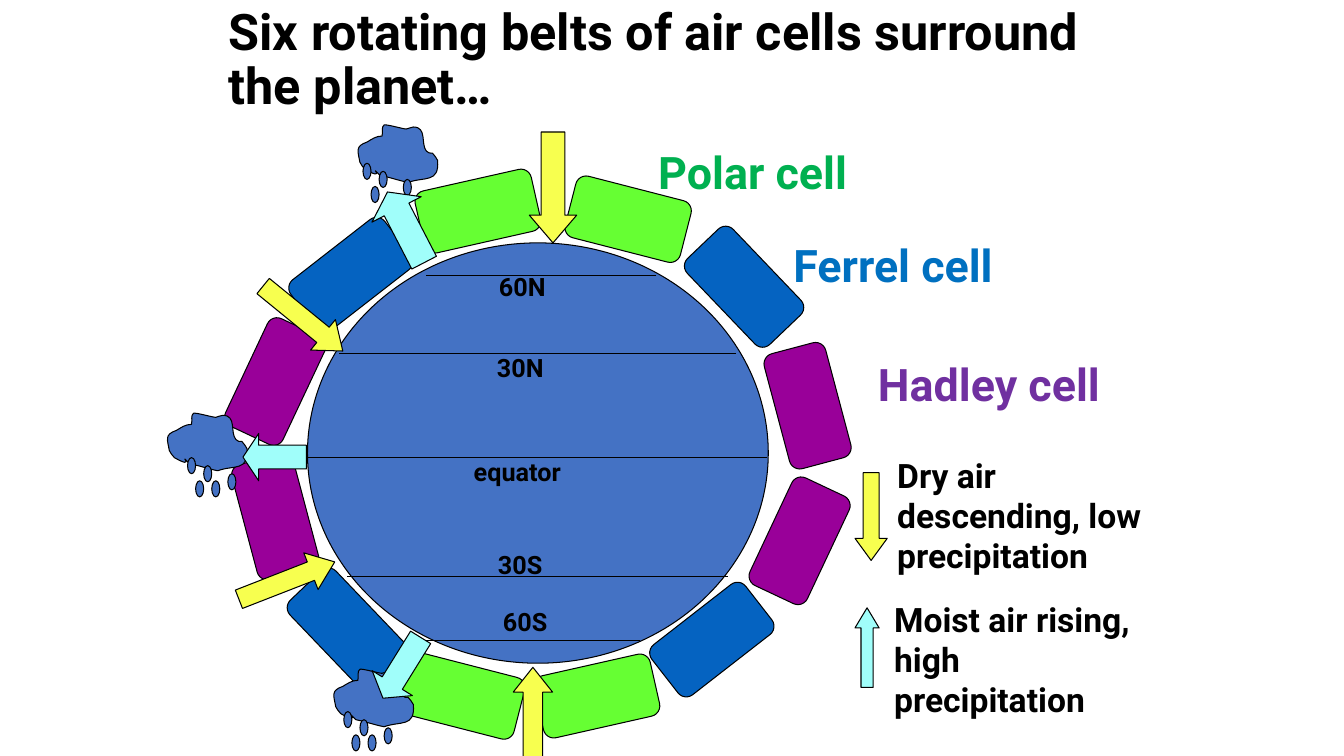
from dataclasses import dataclass
from lxml.etree import SubElement
from pptx import Presentation
from pptx.dml.color import RGBColor
from pptx.enum.shapes import MSO_CONNECTOR, MSO_SHAPE
from pptx.enum.text import MSO_ANCHOR, MSO_AUTO_SIZE
from pptx.oxml.ns import qn
from pptx.util import Inches, Pt

COLORS = {
    "black": "000000", "earth": "4472C4",
    "polar": "66FF33", "ferrel": "0563C1", "hadley": "990099",
    "polar text": "00B050", "ferrel text": "0070C0", "hadley text": "7030A0",
    "dry": "F7FF4F", "moist": "A0FEFA",
}
FONT = "Roboto"
LINE_WIDTH = Pt(0.75)
CELL_SIZE = (1.18, 0.63)
DROP_SIZE = (0.08, 0.16)
CLOUD_START = (0.27, 0.12)
CLOUD_CURVES = [
    ((0.28, 0.08), (0.26, 0.03), (0.29, 0.01)),
    ((0.31, 0), (0.48, 0.05), (0.51, 0.05)),
    ((0.53, 0.05), (0.55, 0.03), (0.58, 0.03)),
    ((0.72, 0.03), (0.65, 0.2), (0.71, 0.27)),
    ((0.72, 0.29), (0.75, 0.29), (0.77, 0.29)),
    ((0.79, 0.32), (0.81, 0.33), (0.82, 0.36)),
    ((0.84, 0.59), (0.69, 0.52), (0.53, 0.58)),
    ((0.43, 0.56), (0.35, 0.53), (0.25, 0.51)),
    ((0.12, 0.38), (0.33, 0.58), (0.1, 0.45)),
    ((0.07, 0.43), (0.07, 0.4), (0.05, 0.38)),
    ((0.03, 0.27), (0, 0.22), (0.12, 0.18)),
    ((0.17, 0.15), (0.21, 0.12), (0.27, 0.12)),
]


@dataclass
class Cell:
    belt: str
    left: float
    top: float
    tilt: float


@dataclass
class Cloud:
    left: float
    top: float
    rain_left: float
    rain_top: float
    lowest_drop: float = 0.23


@dataclass
class Arrow:
    kind: MSO_SHAPE
    air: str
    left: float
    top: float
    width: float
    height: float
    head: float
    tilt: float = 0


@dataclass
class Label:
    lines: list[str]
    left: float
    top: float
    width: float
    height: float
    size: int
    color: str = "black"


@dataclass
class Latitude:
    left: float
    right: float
    top: float


CELLS = [
    Cell("polar", 5.64, 1.86, 14.4), Cell("ferrel", 6.79, 2.53, 46.3),
    Cell("hadley", 7.42, 3.71, 75.1), Cell("hadley", 7.34, 5.05, 115.2),
    Cell("ferrel", 6.47, 6.03, 142.1), Cell("polar", 5.33, 6.59, 347.3),
    Cell("polar", 3.99, 6.59, 14.4), Cell("ferrel", 2.89, 2.41, 142.1),
    Cell("polar", 4.15, 1.78, 347.3), Cell("hadley", 2.14, 3.47, 115.2),
    Cell("hadley", 2.14, 4.81, 75.1), Cell("ferrel", 2.85, 5.92, 46.3),
]
CLOUDS = [
    Cloud(3.52, 1.23, 3.6, 1.62, lowest_drop=0.37),
    Cloud(3.28, 6.63, 3.41, 7.06),
    Cloud(1.63, 4.09, 1.86, 4.54),
]
ARROWS = [
    Arrow(MSO_SHAPE.DOWN_ARROW, "dry", 8.48, 4.69, 0.32, 0.87, 0.685),
    Arrow(MSO_SHAPE.UP_ARROW, "moist", 8.48, 6.03, 0.24, 0.79, 0.833),
    Arrow(MSO_SHAPE.DOWN_ARROW, "dry", 2.81, 2.65, 0.39, 1.02, 0.65, 309.2),
    Arrow(MSO_SHAPE.DOWN_ARROW, "dry", 5.25, 1.31, 0.47, 1.1, 0.584),
    Arrow(MSO_SHAPE.UP_ARROW, "dry", 5.09, 6.62, 0.39, 0.99, 0.63),
    Arrow(MSO_SHAPE.UP_ARROW, "dry", 2.65, 5.25, 0.39, 1.02, 0.65, 68.7),
    Arrow(MSO_SHAPE.UP_ARROW, "moist", 3.75, 1.86, 0.55, 0.79, 0.356, 332.6),
    Arrow(MSO_SHAPE.LEFT_ARROW, "moist", 2.41, 4.3, 0.63, 0.47, 0.333),
    Arrow(MSO_SHAPE.DOWN_ARROW, "moist", 3.75, 6.27, 0.47, 0.71, 0.374, 31.8),
]
LATITUDES = [
    Latitude(4.23, 6.51, 2.73), Latitude(3.36, 7.3, 3.51),
    Latitude(3.04, 7.61, 4.54), Latitude(3.44, 7.22, 5.72),
    Latitude(4.23, 6.35, 6.35),
]
TITLE = Label(["Six rotating belts of air cells surround the planet…"],
              2.17, -0.02, 9, 1.25, 36)
LABELS = [
    Label(["Polar cell"], 6.43, 1.39, 2.26, 0.63, 32, "polar text"),
    Label(["Ferrel cell"], 7.77, 2.31, 2.4, 0.63, 32, "ferrel text"),
    Label(["Hadley cell"], 8.61, 3.49, 2.64, 0.63, 32, "hadley text"),
    Label(["Dry air", "descending, low", "precipitation"], 8.8, 4.46, 3.03, 1.31, 24),
    Label(["Moist air rising,", "high", "precipitation"], 8.77, 5.89, 2.83, 1.31, 24),
    Label(["60N"], 4.85, 2.64, 0.71, 0.4, 18),
    Label(["30N"], 4.83, 3.45, 0.71, 0.4, 18),
    Label(["equator"], 4.6, 4.48, 1.18, 0.4, 18),
    Label(["30S"], 4.84, 5.4, 0.68, 0.4, 18),
    Label(["60S"], 4.89, 5.97, 0.68, 0.4, 18),
]


def color(name: str) -> RGBColor:
    return RGBColor.from_string(COLORS[name])


def paint(shape, fill: str) -> None:
    shape.shadow.inherit = False
    shape.fill.solid()
    shape.fill.fore_color.rgb = color(fill)
    shape.line.color.rgb = color("black")
    shape.line.width = LINE_WIDTH


def draw_shape(page, kind: MSO_SHAPE, left: float, top: float, width: float,
               height: float, fill: str, tilt: float = 0):
    shape = page.shapes.add_shape(
        kind, Inches(left), Inches(top), Inches(width), Inches(height))
    shape.rotation = tilt
    paint(shape, fill)
    return shape


def draw_arrow(page, arrow: Arrow) -> None:
    shape = draw_shape(page, arrow.kind, arrow.left, arrow.top, arrow.width,
                       arrow.height, arrow.air, arrow.tilt)
    shape.adjustments[0] = 0.5
    shape.adjustments[1] = arrow.head


def bend_segments(shape) -> None:
    segments = list(shape._element.iter(qn("a:lnTo")))
    for start in range(0, len(segments), 3):
        first, *others = segments[start:start + 3]
        first.tag = qn("a:cubicBezTo")
        for segment in others:
            first.append(segment[0])
            segment.getparent().remove(segment)


def draw_cloud(page, cloud: Cloud) -> None:
    outline = [CLOUD_START] + [point for curve in CLOUD_CURVES for point in curve]
    points = [(Inches(cloud.left + x), Inches(cloud.top + y)) for x, y in outline]
    builder = page.shapes.build_freeform(*points[0])
    builder.add_line_segments(points[1:], close=True)
    shape = builder.convert_to_shape()
    bend_segments(shape)
    paint(shape, "earth")
    drops = [(0.16, 0.08), (0.4, 0.16), (0, 0), (0.24, cloud.lowest_drop), (0.08, 0.23)]
    for x, y in drops:
        draw_shape(page, MSO_SHAPE.OVAL, cloud.rain_left + x, cloud.rain_top + y,
                   *DROP_SIZE, "earth")


def draw_latitude(page, latitude: Latitude) -> None:
    line = page.shapes.add_connector(
        MSO_CONNECTOR.STRAIGHT, Inches(latitude.right), Inches(latitude.top),
        Inches(latitude.left), Inches(latitude.top))
    line.line.color.rgb = color("black")
    line.line.width = LINE_WIDTH
    SubElement(line._element.spPr, qn("a:effectLst"))


def draw_label(page, label: Label):
    box = page.shapes.add_textbox(Inches(label.left), Inches(label.top),
                                  Inches(label.width), Inches(label.height))
    frame = box.text_frame
    frame.word_wrap = False
    frame.auto_size = MSO_AUTO_SIZE.SHAPE_TO_FIT_TEXT
    frame.text = "\n".join(label.lines)
    for para in frame.paragraphs:
        para.font.name = FONT
        para.font.size = Pt(label.size)
        para.font.bold = True
        para.font.color.rgb = color(label.color)
    return frame


def draw_title(page) -> None:
    frame = draw_label(page, TITLE)
    frame.word_wrap = True
    frame.auto_size = MSO_AUTO_SIZE.NONE
    frame.vertical_anchor = MSO_ANCHOR.MIDDLE
    frame.paragraphs[0].line_spacing = 0.9


def main() -> None:
    deck = Presentation()
    deck.slide_width, deck.slide_height = Inches(13.33), Inches(7.5)
    page = deck.slides.add_slide(deck.slide_layouts[6])
    draw_title(page)
    draw_shape(page, MSO_SHAPE.OVAL, 3.05, 2.41, 4.57, 4.17, "earth")
    for cell in CELLS:
        draw_shape(page, MSO_SHAPE.ROUNDED_RECTANGLE, cell.left, cell.top,
                   *CELL_SIZE, cell.belt, cell.tilt)
    for draw, items in ((draw_cloud, CLOUDS), (draw_arrow, ARROWS),
                        (draw_latitude, LATITUDES), (draw_label, LABELS)):
        for item in items:
            draw(page, item)
    deck.save("out.pptx")


if __name__ == "__main__":
    main()
